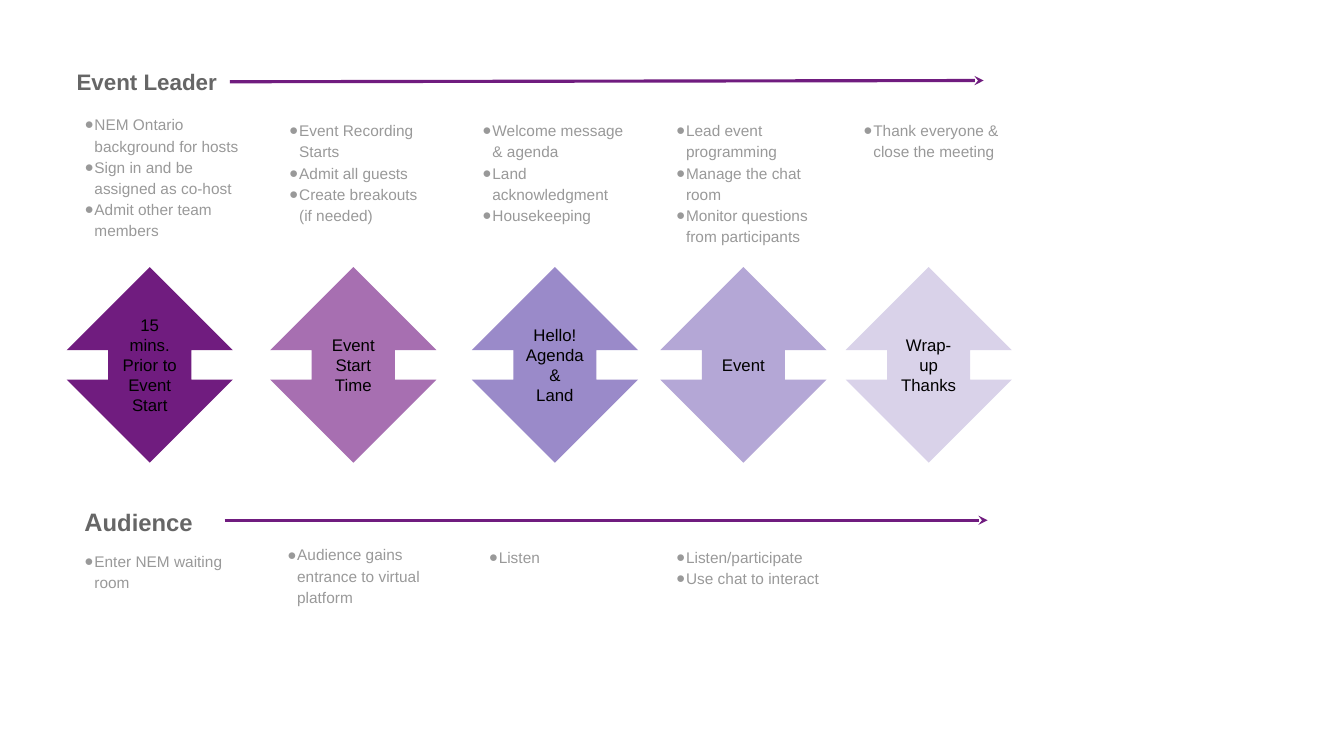
from dataclasses import dataclass

from lxml.etree import SubElement
from pptx import Presentation
from pptx.dml.color import RGBColor
from pptx.enum.shapes import MSO_CONNECTOR, MSO_SHAPE
from pptx.enum.text import MSO_ANCHOR, MSO_AUTO_SIZE, PP_ALIGN
from pptx.oxml.ns import qn
from pptx.text.text import TextFrame
from pptx.util import Cm, Pt

FONT = "Arial"
PURPLE = RGBColor(0x70, 0x1C, 0x7F)
ORCHID = RGBColor(0x76, 0x1E, 0x86)
VIOLET = RGBColor(0x8E, 0x7C, 0xC3)
LILAC = RGBColor(0xB4, 0xA7, 0xD6)
PALE = RGBColor(0xD9, 0xD2, 0xE9)
DARK = RGBColor(0x66, 0x66, 0x66)
GREY = RGBColor(0x99, 0x99, 0x99)
BLACK = RGBColor(0, 0, 0)


@dataclass
class Points:
    left: float
    top: float
    width: float
    items: list[str]


@dataclass
class Stage:
    left: float
    lines: list[str]
    color: RGBColor
    alpha: int = 100


@dataclass
class Track:
    left: float
    right: float
    start: float
    end: float


LEADER = [
    Points(1.88, 2.59, 4.83, ["NEM Ontario background for hosts",
                              "Sign in and be assigned as co-host",
                              "Admit other team members"]),
    Points(7.04, 2.74, 3.81, ["Event Recording Starts", "Admit all guests",
                              "Create breakouts (if needed)"]),
    Points(11.91, 2.74, 4.19, ["Welcome message & agenda",
                               "Land acknowledgment", "Housekeeping"]),
    Points(16.79, 2.74, 4.19, ["Lead event programming",
                               "Manage the chat room",
                               "Monitor questions from participants"]),
    Points(21.51, 2.74, 4.52, ["Thank everyone & close the meeting"]),
]
CROWD = [
    Points(1.88, 13.59, 4.83, ["Enter NEM waiting room"]),
    Points(6.99, 13.43, 4.52, ["Audience gains entrance to virtual platform"]),
    Points(12.07, 13.49, 4.52, ["Listen"]),
    Points(16.79, 13.49, 4.52, ["Listen/participate", "Use chat to interact"]),
]
STAGES = [
    Stage(1.68, ["15 mins. Prior to Event Start"], PURPLE),
    Stage(6.81, ["Event Start Time"], ORCHID, 64),
    Stage(11.89, ["Hello! Agenda", "&", "Land"], VIOLET, 89),
    Stage(16.64, ["Event"], LILAC),
    Stage(21.31, ["Wrap-up", "Thanks"], PALE),
]
TRACKS = [Track(5.79, 24.79, 2.06, 2.03), Track(5.66, 24.89, 13.11, 13.11)]


def place(shape, left: float, top: float, width: float, height: float) -> None:
    shape.left, shape.top = Cm(left), Cm(top)
    shape.width, shape.height = Cm(width), Cm(height)


def setup(frame: TextFrame, anchor: MSO_ANCHOR) -> None:
    frame.word_wrap = True
    frame.auto_size = MSO_AUTO_SIZE.NONE
    frame.vertical_anchor = anchor
    frame.margin_left = frame.margin_right = Cm(0.25)
    frame.margin_top = frame.margin_bottom = Cm(0.25)


def style(para, size: float, color: RGBColor, bold: bool = False) -> None:
    font = para.font
    font.name, font.size, font.bold = FONT, Pt(size), bold
    font.color.rgb = color


def fill_rows(frame: TextFrame, rows: list[str]) -> None:
    frame.text = "\n".join(rows)


def add_dot(para) -> None:
    props = para._p.get_or_add_pPr()
    props.set("marL", str(Cm(0.25)))
    props.set("indent", str(-Cm(0.33)))
    tint = SubElement(props, qn("a:buClr"))
    SubElement(tint, qn("a:srgbClr")).set("val", str(GREY))
    SubElement(props, qn("a:buFont")).set("typeface", FONT)
    SubElement(props, qn("a:buChar")).set("char", "●")


def draw_list(shape, points: Points) -> None:
    place(shape, points.left, points.top, points.width, 4.04)
    frame = shape.text_frame
    setup(frame, MSO_ANCHOR.TOP)
    fill_rows(frame, points.items)
    for para in frame.paragraphs:
        add_dot(para)
        para.line_spacing = 1.15
        para.space_before = Pt(0)
        style(para, 11, GREY)


def draw_head(shape, left: float, top: float, text: str, size: float) -> None:
    place(shape, left, top, 5.74, 1.19)
    frame = shape.text_frame
    setup(frame, MSO_ANCHOR.TOP)
    frame.text = text
    para = frame.paragraphs[0]
    para.alignment = PP_ALIGN.LEFT
    style(para, size, DARK, True)


def draw_stage(shapes, stage: Stage) -> None:
    arrow = shapes.add_shape(MSO_SHAPE.UP_DOWN_ARROW, Cm(stage.left),
                             Cm(6.73), Cm(4.19), Cm(4.93))
    arrow.shadow.inherit = False
    arrow.line.fill.background()
    arrow.fill.solid()
    arrow.fill.fore_color.rgb = stage.color
    if stage.alpha < 100:
        tint = arrow._element.spPr.find(qn("a:solidFill"))[0]
        SubElement(tint, qn("a:alpha")).set("val", str(stage.alpha * 1000))
    setup(arrow.text_frame, MSO_ANCHOR.MIDDLE)
    fill_rows(arrow.text_frame, stage.lines)
    for para in arrow.text_frame.paragraphs:
        para.alignment = PP_ALIGN.CENTER
        style(para, 12, BLACK)


def draw_track(shapes, track: Track) -> None:
    line = shapes.add_connector(MSO_CONNECTOR.STRAIGHT, Cm(track.left),
                                Cm(track.start), Cm(track.right), Cm(track.end))
    line.line.color.rgb = PURPLE
    line.line.width = Pt(2.25)
    SubElement(line.line._get_or_add_ln(), qn("a:tailEnd")).set("type", "stealth")
    SubElement(line._element.spPr, qn("a:effectLst"))


def main() -> None:
    deck = Presentation()
    deck.slide_width, deck.slide_height = Cm(33.87), Cm(19.05)
    slide = deck.slides.add_slide(deck.slide_layouts[1])
    shapes = slide.shapes

    # Headings
    draw_head(shapes.title, 1.68, 1.47, "Event Leader", 16)
    crowd = shapes.add_textbox(0, 0, 0, 0)
    draw_head(crowd, 1.88, 12.5, "A", 17)
    para = crowd.text_frame.paragraphs[0]
    para.runs[0].font.size = Pt(18)
    para.add_run().text = "udience"

    # Lists above and below the stages
    draw_list(slide.placeholders[1], LEADER[0])
    for points in LEADER[1:] + CROWD:
        draw_list(shapes.add_textbox(0, 0, 0, 0), points)

    # Stages and time arrows
    for stage in STAGES:
        draw_stage(shapes, stage)
    for track in TRACKS:
        draw_track(shapes, track)

    deck.save("out.pptx")


if __name__ == "__main__":
    main()
